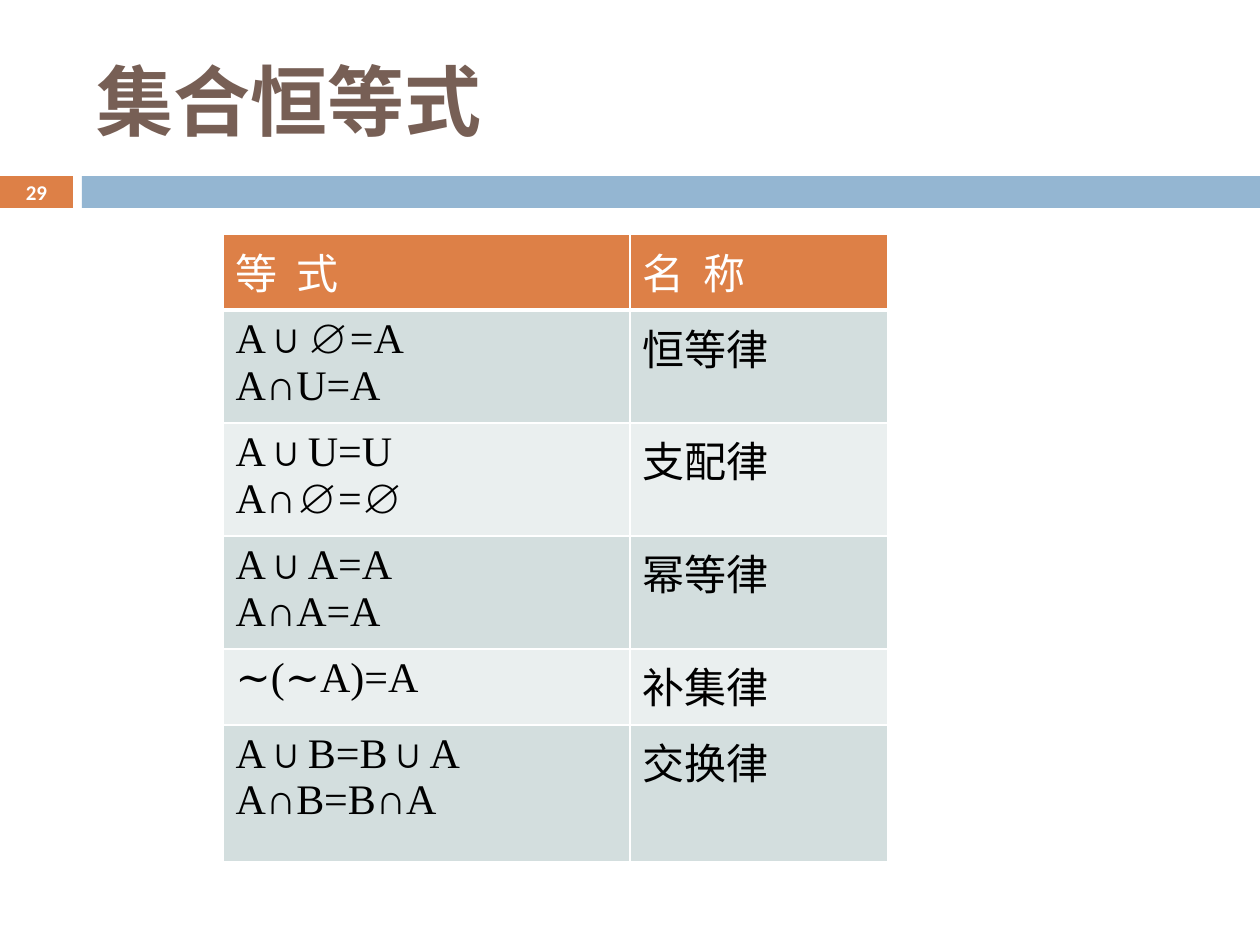
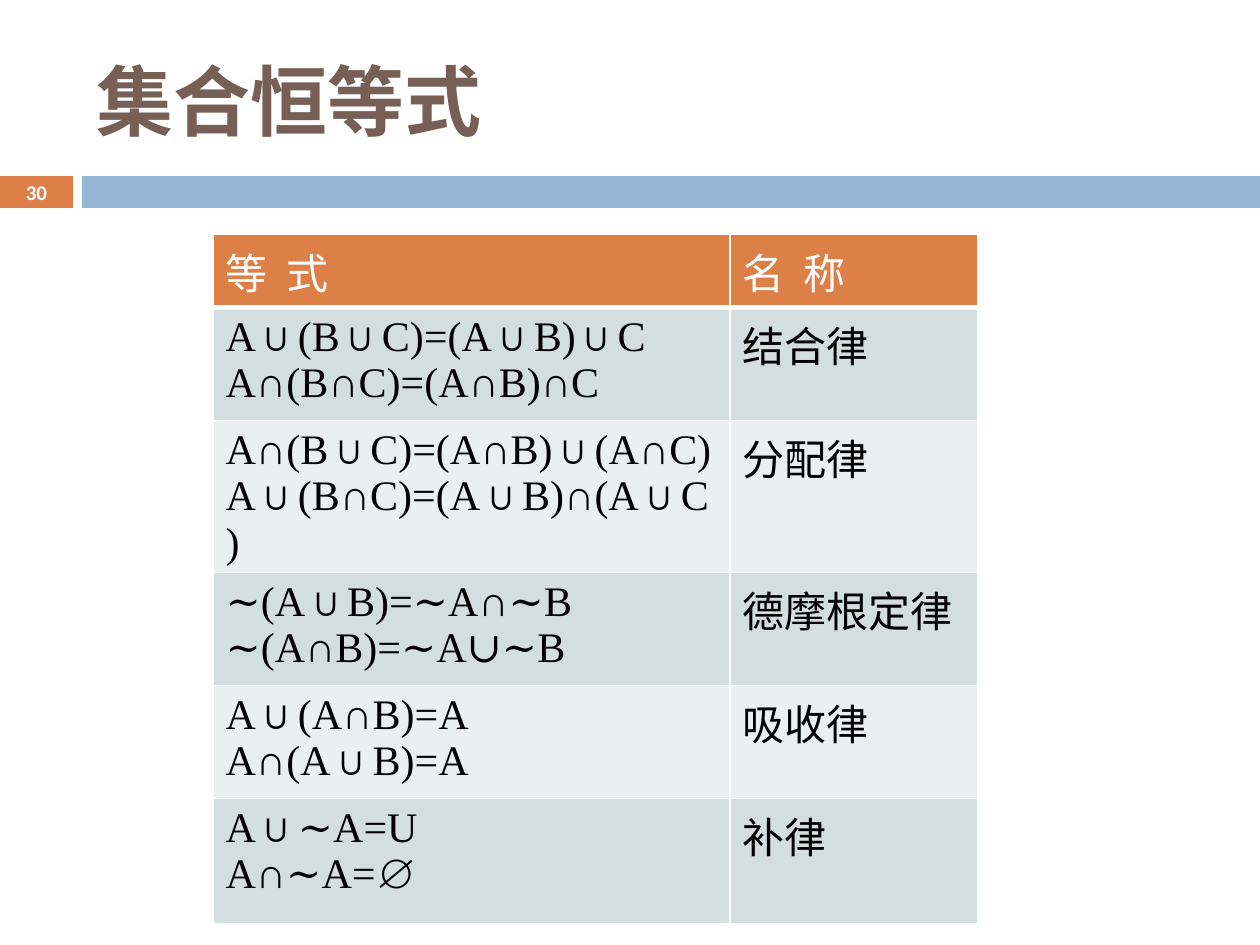
import lxml.etree
import pptx
import pptx.dml.color
import pptx.enum.lang
import pptx.enum.shapes
import pptx.enum.text
import pptx.oxml.ns
import pptx.util

EMU_PER_PX = 914400 / 126
ORANGE, BLUE, BROWN = "DD8047", "94B6D2", "775F55"
WHITE, BLACK = "FFFFFF", "000000"
ROW_FILLS = ("D3DEDE", "EAEFEF")
HEADING_FONT, TABLE_FONT = "Calibri", "Times New Roman"

TITLE = "集合恒等式"
HEADER = (["等  式"], "名  称")
TITLE_AREA = (84, 32, 1124, 136)
NUMBER_BAND = (0, 176, 73, 32)
WIDE_BAND = (82, 176, 1178, 32)
TABLE_TOP = 234

# Each law: formulas, name and, where formulas open with one, a bullet sign.
SLIDES = [
    {
        "number": "29",
        "left": 223,
        "columns": (407, 258),
        "rows": (76, 113, 113, 113, 76, 137),
        "laws": [
            (["A∪∅=A", "A∩U=A"], "恒等律"),
            (["A∪U=U", "A∩∅=∅"], "支配律"),
            (["A∪A=A", "A∩A=A"], "幂等律"),
            (["∼(∼A)=A"], "补集律"),
            (["A∪B=B∪A", "A∩B=B∩A"], "交换律"),
        ],
    },
    {
        "number": "30",
        "left": 213,
        "columns": (517, 248),
        "rows": (69, 113, 113, 113, 113, 125),
        "laws": [
            (["A∪(B∪C)=(A∪B)∪C", "A∩(B∩C)=(A∩B)∩C"], "结合律"),
            (["A∩(B∪C)=(A∩B)∪(A∩C)", "A∪(B∩C)=(A∪B)∩(A∪C)"], "分配律"),
            (["(A∪B)=∼A∩∼B", "(A∩B)=∼A∪∼B"], "德摩根定律", "∼"),
            (["A∪(A∩B)=A", "A∩(A∪B)=A"], "吸收律"),
            (["A∪∼A=U", "A∩∼A=∅"], "补律"),
        ],
    },
]


def px(length):
    return pptx.util.Emu(round(length * EMU_PER_PX))


def color(value):
    return pptx.dml.color.RGBColor.from_string(value)


def add_element(parent, tag, **attributes):
    return lxml.etree.SubElement(parent, pptx.oxml.ns.qn(tag), attributes)


def add_span(para, text, font, size, ink, bold=False):
    span = para.add_run()
    span.text = text
    span.font.name = font
    span.font.size = pptx.util.Pt(size)
    span.font.bold = bold
    span.font.color.rgb = color(ink)
    span.font.language_id = pptx.enum.lang.MSO_LANGUAGE_ID.SIMPLIFIED_CHINESE


def add_title(page):
    title = page.shapes.title
    title.left, title.top, title.width, title.height = map(px, TITLE_AREA)
    title.text_frame.vertical_anchor = pptx.enum.text.MSO_ANCHOR.MIDDLE
    para = title.text_frame.paragraphs[0]
    para.alignment = pptx.enum.text.PP_ALIGN.LEFT
    add_span(para, TITLE, HEADING_FONT, 44, BROWN, bold=True)


def add_band(page, area, fill):
    band = page.shapes.add_shape(
        pptx.enum.shapes.MSO_SHAPE.RECTANGLE, *map(px, area))
    band.shadow.inherit = False
    band.fill.solid()
    band.fill.fore_color.rgb = color(fill)
    band.line.fill.background()
    return band


def add_number(page, number):
    frame = add_band(page, NUMBER_BAND, ORANGE).text_frame
    frame.margin_left = frame.margin_right = 0
    frame.margin_top = frame.margin_bottom = 0
    frame.vertical_anchor = pptx.enum.text.MSO_ANCHOR.MIDDLE
    para = frame.paragraphs[0]
    para.alignment = pptx.enum.text.PP_ALIGN.CENTER
    add_span(para, number, HEADING_FONT, 12, WHITE, bold=True)


def add_bullet(para, sign):
    properties = para._p.get_or_add_pPr()
    properties.set("marL", "0")
    properties.set("indent", "0")
    add_element(properties, "a:buFont", typeface=TABLE_FONT)
    add_element(properties, "a:buChar", char=sign)


def set_borders(cell, top, bottom):
    """Draw white cell borders, 1 pt at the sides, top and bottom in points."""
    properties = cell._tc.get_or_add_tcPr()
    for side, points in (("L", 1), ("R", 1), ("T", top), ("B", bottom)):
        line = add_element(properties, "a:ln" + side,
                           w=str(pptx.util.Pt(points)))
        add_element(add_element(line, "a:solidFill"), "a:srgbClr", val=WHITE)


def fill_cell(cell, lines, row, bullet=None):
    set_borders(cell, top=3 if row == 1 else 1, bottom=3 if row == 0 else 1)
    cell.fill.solid()
    cell.fill.fore_color.rgb = color(
        ROW_FILLS[(row - 1) % 2] if row else ORANGE)
    for index, text in enumerate(lines):
        frame = cell.text_frame
        para = frame.add_paragraph() if index else frame.paragraphs[0]
        if bullet:
            add_bullet(para, bullet)
        add_span(para, text, TABLE_FONT, 24, BLACK if row else WHITE)


def add_law_table(page, content):
    widths, heights = content["columns"], content["rows"]
    table = page.shapes.add_table(
        len(heights), len(widths), px(content["left"]), px(TABLE_TOP),
        px(sum(widths)), px(sum(heights))).table
    table.horz_banding = False
    for column, width in zip(table.columns, widths):
        column.width = px(width)
    for row, height in zip(table.rows, heights):
        row.height = px(height)
    for row, (formulas, name, *bullet) in enumerate([HEADER, *content["laws"]]):
        fill_cell(table.cell(row, 0), formulas, row, *bullet)
        fill_cell(table.cell(row, 1), [name], row)


def main():
    deck = pptx.Presentation()
    deck.slide_width, deck.slide_height = px(1260), px(945)
    title_only = deck.slide_layouts.get_by_name("Title Only")
    for content in SLIDES:
        page = deck.slides.add_slide(title_only)
        add_title(page)
        add_band(page, WIDE_BAND, BLUE)
        add_number(page, content["number"])
        add_law_table(page, content)
    deck.save("out.pptx")


if __name__ == "__main__":
    main()
